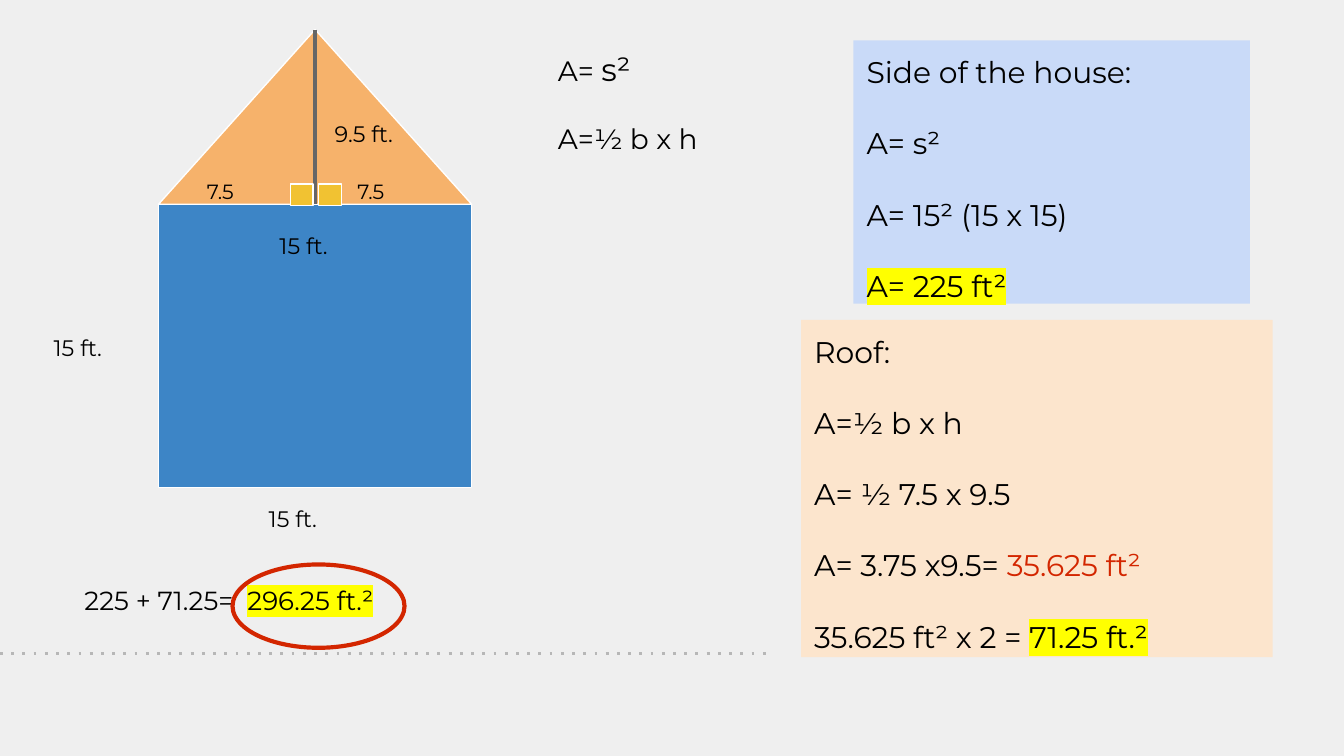
from lxml import etree
from pptx import Presentation
from pptx.dml.color import RGBColor
from pptx.enum.shapes import MSO_CONNECTOR, MSO_SHAPE
from pptx.enum.text import MSO_ANCHOR, PP_ALIGN
from pptx.oxml.ns import qn
from pptx.util import Inches, Pt

STRAIGHT = MSO_CONNECTOR.STRAIGHT
RECTANGLE, TRIANGLE, OVAL = MSO_SHAPE.RECTANGLE, MSO_SHAPE.ISOSCELES_TRIANGLE, MSO_SHAPE.OVAL
TOP, LEFT = MSO_ANCHOR.TOP, PP_ALIGN.LEFT

BLACK = RGBColor(0x00, 0x00, 0x00)
WHITE = RGBColor(0xFF, 0xFF, 0xFF)
PAPER = RGBColor(0xEF, 0xEF, 0xEF)
RULE_GRAY = RGBColor(0xB7, 0xB7, 0xB7)
HEIGHT_GRAY = RGBColor(0x66, 0x66, 0x66)
WALL_BLUE = RGBColor(0x3D, 0x85, 0xC6)
ROOF_ORANGE = RGBColor(0xF6, 0xB2, 0x6B)
MARK_GOLD = RGBColor(0xF1, 0xC2, 0x32)
PALE_BLUE = RGBColor(0xC9, 0xDA, 0xF8)
PALE_ORANGE = RGBColor(0xFC, 0xE5, 0xCD)
RED = RGBColor(0xD3, 0x26, 0x00)
YELLOW = RGBColor(0xFF, 0xFF, 0x00)

FONT = "Montserrat"
COLUMNS = 100
CELL = Inches(10) / COLUMNS


def cells(*counts):
    return [round(count * CELL) for count in counts]


def add_run(paragraph, text, size=16, color=BLACK, highlight=None, tracking=0):
    run = paragraph.add_run()
    run.text = text
    run.font.size = Pt(size)
    run.font.color.rgb = color
    run.font.name = FONT
    properties = run.font._element
    if highlight:
        marker = etree.Element(qn("a:highlight"))
        etree.SubElement(marker, qn("a:srgbClr"), val=str(highlight))
        properties.find(qn("a:solidFill")).addnext(marker)
    if tracking:
        properties.set("spc", str(round(tracking * 100)))


class GeometrySlide:
    """Draws on one blank slide, measured in square cells of a 100-column grid."""

    def __init__(self, deck):
        self.slide = deck.slides.add_slide(deck.slide_layouts[6])
        background = self.slide.background.fill
        background.solid()
        background.fore_color.rgb = PAPER

    def line(self, start, end, color, weight, dash=None):
        connector = self.slide.shapes.add_connector(STRAIGHT, *cells(*start, *end))
        connector.line.color.rgb = color
        connector.line.width = Pt(weight)
        properties = connector._element.spPr
        if dash:
            etree.SubElement(properties.find(qn("a:ln")), qn("a:prstDash"), val=dash)
        etree.SubElement(properties, qn("a:effectLst"))

    def shape(self, kind, box, fill=None, outline=WHITE, weight=0.75):
        shape = self.slide.shapes.add_shape(kind, *cells(*box))
        shape.shadow.inherit = False
        if fill is None:
            shape.fill.background()
        else:
            shape.fill.solid()
            shape.fill.fore_color.rgb = fill
        if outline is None:
            shape.line.fill.background()
        else:
            shape.line.color.rgb = outline
            shape.line.width = Pt(weight)
        return shape

    def set_rows(self, holder, rows, inset=1, gap=0):
        frame = holder.text_frame
        frame.word_wrap = True
        frame.vertical_anchor = TOP
        frame.margin_left, frame.margin_top, frame.margin_right, frame.margin_bottom = cells(*[inset] * 4)
        for index, row in enumerate(rows):
            paragraph = frame.add_paragraph() if index else frame.paragraphs[0]
            paragraph.alignment = LEFT
            paragraph.space_before = Pt(gap if index else 0)
            for text, style in row:
                add_run(paragraph, text, **style)

    def label(self, box, rows, inset=0.7, gap=0):
        self.set_rows(self.slide.shapes.add_textbox(*cells(*box)), rows, inset, gap)

    def panel(self, box, fill, rows):
        self.set_rows(self.shape(RECTANGLE, box, fill, outline=None), rows, gap=19)


def main():
    deck = Presentation()
    deck.slide_width = Inches(10)
    deck.slide_height = Inches(10 * 9 / 16)
    page = GeometrySlide(deck)
    page.line((0, 48.6), (57.2, 48.6), RULE_GRAY, 1.5, dash="dot")

    house_left, house_width = 11.8, 23.3
    apex, eaves, wall_height = 2.2, 15.2, 21.1
    middle = house_left + house_width / 2
    page.shape(RECTANGLE, (house_left, eaves, house_width, wall_height), WALL_BLUE)
    page.shape(TRIANGLE, (house_left, apex, house_width, eaves - apex), ROOF_ORANGE)
    page.line((middle, apex), (middle, eaves), HEIGHT_GRAY, 1.88)
    for mark_left in (21.6, 23.7):
        page.shape(RECTANGLE, (mark_left, 13.7, 1.7, 1.6), MARK_GOLD)

    for left, top in ((3.3, 24.2), (19.3, 36.9), (20.1, 16.6)):
        page.label((left, top, 6.4, 2.6), [[("15 ft.", {"size": 12})]])
    page.label((24.2, 8.2, 7.5, 4.1), [[("9.5 ft.", {"size": 12})]])
    for half_base_left in (14.4, 25.6):
        page.label((half_base_left, 12.4, 5.5, 4.1), [[("7.5", {"size": 11})]], inset=1)

    page.label((40.8, 3, 21.2, 10), [
        [("A= ", {"size": 15}), ("s²", {"size": 17})],
        [("A=½ b x h", {"size": 15})],
    ], gap=18)
    page.panel((63.5, 3, 29.5, 19.6), PALE_BLUE, [
        [("Side of the house:", {})],
        [("A= s²", {})],
        [("A= 15² (15 x 15)", {})],
        [("A= 225 ft²", {"highlight": YELLOW})],
    ])
    page.panel((59.6, 23.8, 35.1, 25.1), PALE_ORANGE, [
        [("Roof:", {})],
        [("A=½ b x h", {})],
        [("A= ½ 7.5 x 9.5", {})],
        [("A= 3.75 x9.5= ", {}), ("35.625 ft²", {"color": RED})],
        [("35.625 ft² x 2 = ", {}), ("71.25 ft.²", {"highlight": YELLOW})],
    ])
    page.label((5.3, 42.5, 44.1, 7), [[
        ("225 + 71.25=", {"size": 14}),
        (" ", {"size": 14, "tracking": 3.7}),
        ("296.25 ft.²", {"size": 14, "highlight": YELLOW}),
    ]], inset=1)
    page.shape(OVAL, (17.3, 42, 12.8, 6.2), outline=RED, weight=2.25)

    deck.save("out.pptx")


if __name__ == "__main__":
    main()
